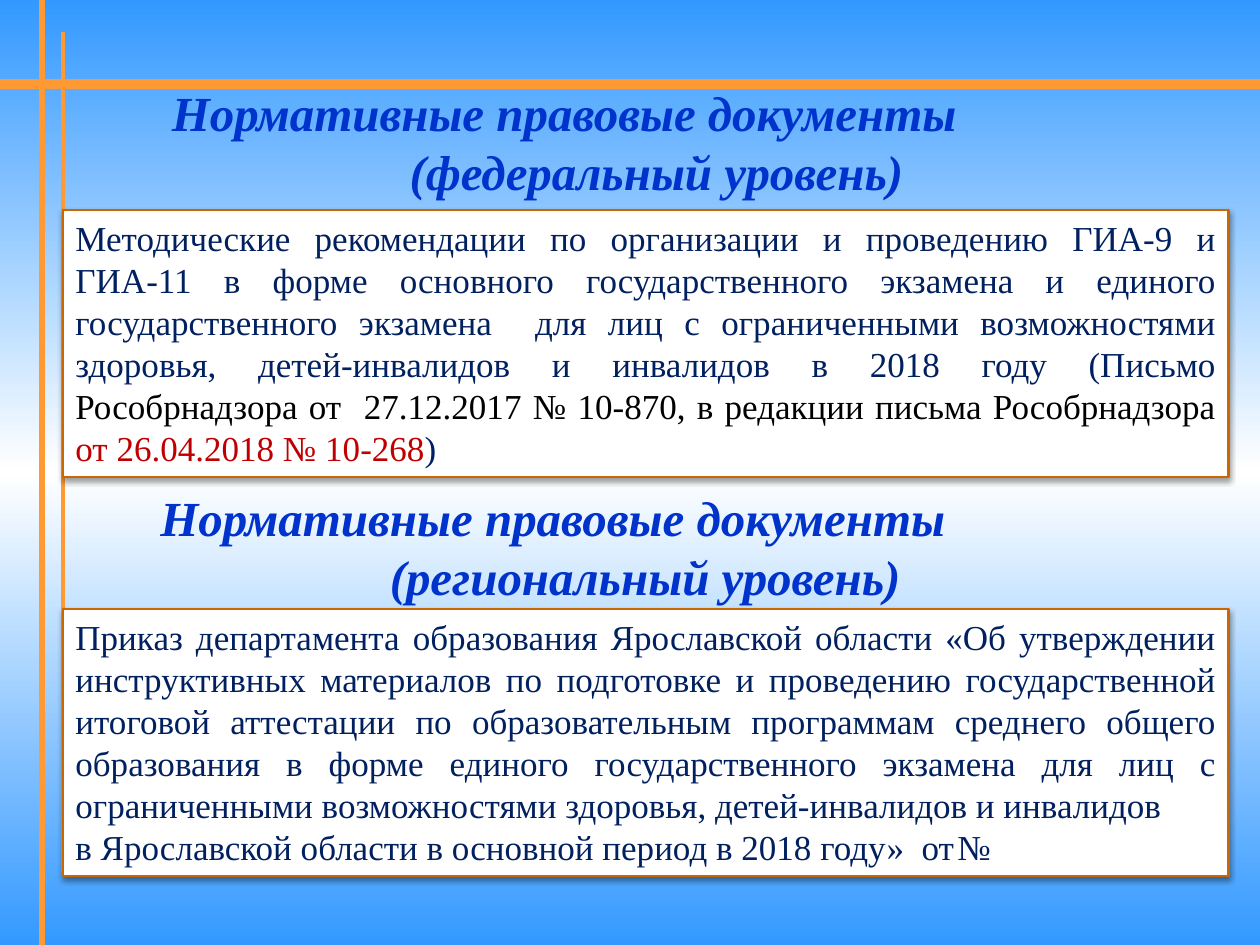
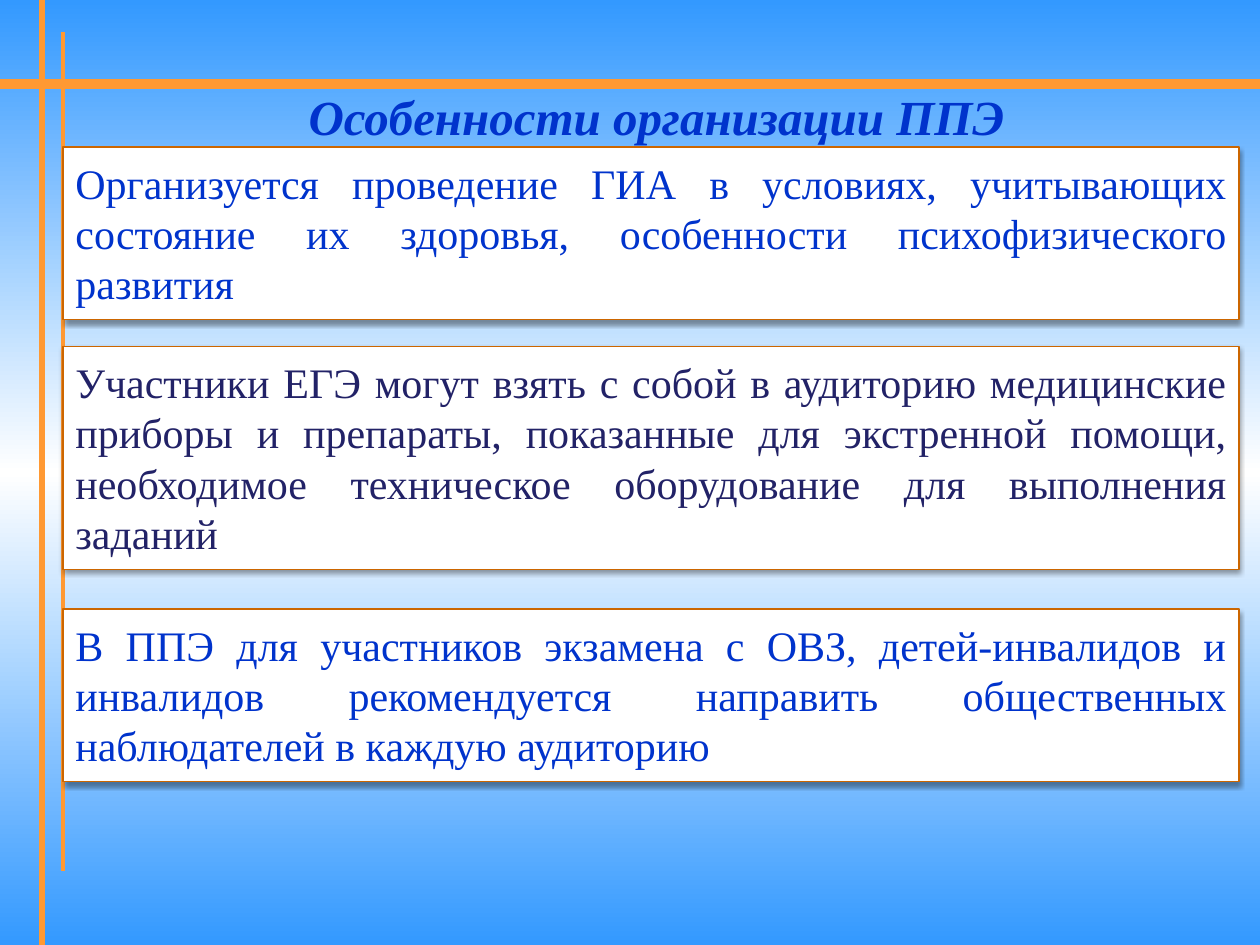
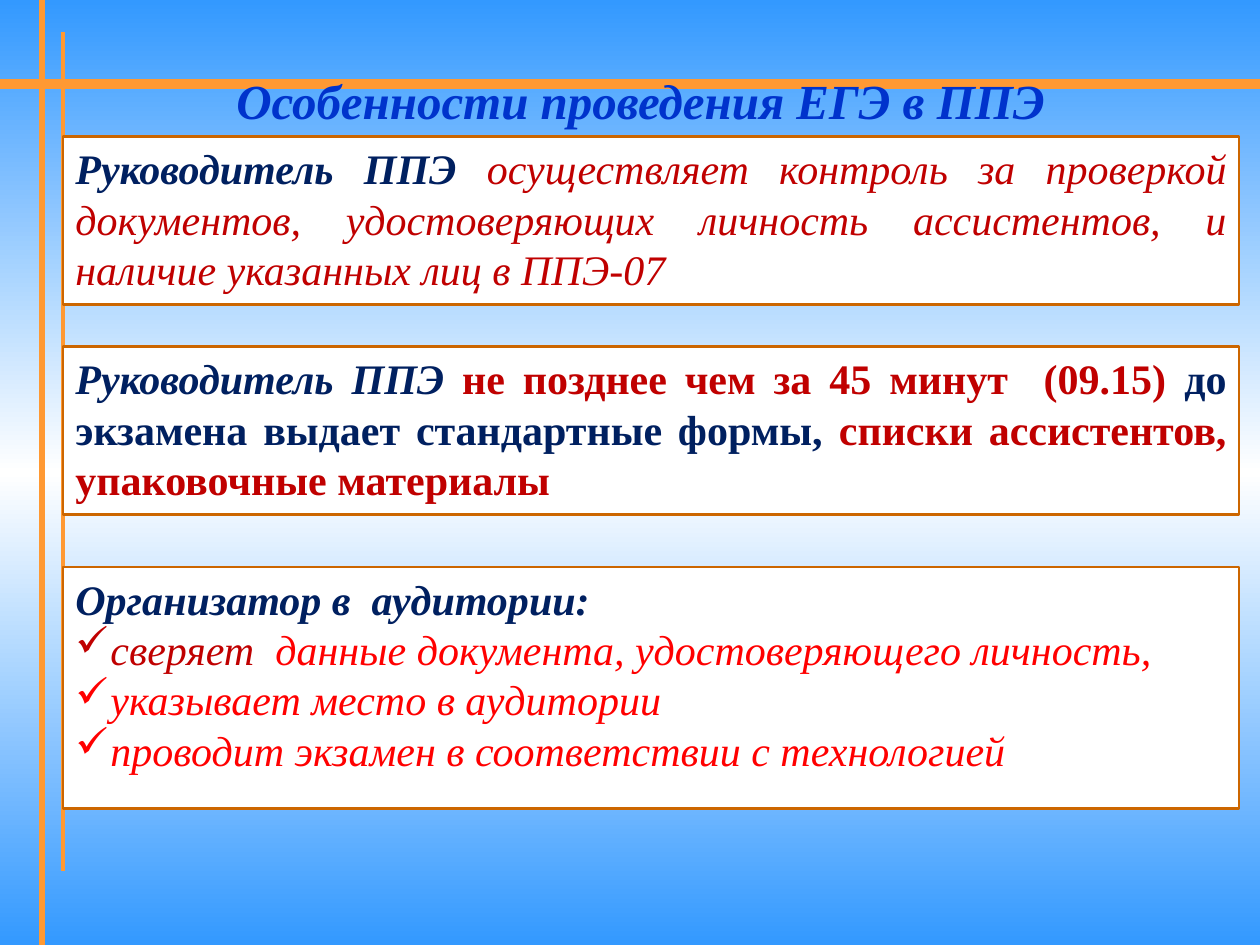
from dataclasses import dataclass

from pptx import Presentation
from pptx.dml.color import RGBColor
from pptx.enum.shapes import MSO_CONNECTOR as Connector, MSO_SHAPE as Preset
from pptx.enum.text import MSO_ANCHOR as Anchor, PP_ALIGN as Align
from pptx.oxml.ns import qn
from pptx.oxml.xmlchemy import OxmlElement
from pptx.util import Pt

FONT = "Times New Roman"
WIDTH, HEIGHT = 720, 540
SKY, WHITE, ORANGE, BROWN = "3399FF", "FFFFFF", "FF9933", "CC6600"
BLUE, NAVY, INDIGO = "0033CC", "002060", "222267"
BLACK, CRIMSON, RED = "000000", "C00000", "FF0000"
TITLE_SIZE = 28
SHADOW_OPACITY = 38


@dataclass(frozen=True)
class Span:
    text: str
    color: str = NAVY
    bold: bool = False
    italic: bool = False


@dataclass(frozen=True)
class Para:
    spans: list[Span]
    align: Align = Align.JUSTIFY
    margin: float = 0
    indent: float = 0
    bullet: str = ""
    tab: float = 0


@dataclass(frozen=True)
class Title:
    left: float
    top: float
    width: float
    height: float
    paras: list[Para]


@dataclass(frozen=True)
class Panel:
    top: float
    height: float
    paras: list[Para]


@dataclass(frozen=True)
class PanelStyle:
    size: float
    width: float = 672
    border: float = 1.5
    padding: float = 3.6
    shadow: bool = False


@dataclass(frozen=True)
class Rule:
    x1: float
    y1: float
    x2: float
    y2: float
    weight: float


@dataclass(frozen=True)
class Page:
    titles: list[Title]
    panels: list[Panel]
    style: PanelStyle


RULES = [
    Rule(0, 48, WIDTH, 48, 6),
    Rule(24, 0, 24, HEIGHT, 3),
    Rule(36, 18, 36, 498, 2.25),
]


def rgb(color: str) -> RGBColor:
    return RGBColor.from_string(color)


def add_child(parent, tag: str, **attributes):
    child = OxmlElement(tag)
    for name, value in attributes.items():
        child.set(name, str(value))
    parent.append(child)
    return child


def set_background(master) -> None:
    fill = master.background.fill
    fill.gradient()
    fill.gradient_angle = 270
    stops = master.element.find(".//" + qn("a:gsLst"))
    for stop in list(stops):
        stops.remove(stop)
    for position, color in ((0, SKY), (50, WHITE), (100, SKY)):
        stop = add_child(stops, "a:gs", pos=position * 1000)
        add_child(stop, "a:srgbClr", val=color)


def draw_rule(slide, rule: Rule) -> None:
    line = slide.shapes.add_connector(
        Connector.STRAIGHT, Pt(rule.x1), Pt(rule.y1), Pt(rule.x2), Pt(rule.y2)
    )
    line.line.color.rgb = rgb(ORANGE)
    line.line.width = Pt(rule.weight)
    add_child(line.element.spPr, "a:effectLst")


def write(frame, paras: list[Para], size: float) -> None:
    frame.word_wrap = True
    for index, item in enumerate(paras):
        para = frame.paragraphs[0] if index == 0 else frame.add_paragraph()
        para.alignment = item.align
        properties = para._p.get_or_add_pPr()
        properties.set("marL", str(Pt(item.margin)))
        properties.set("indent", str(Pt(item.indent)))
        if item.bullet:
            add_child(properties, "a:buChar", char=item.bullet)
        if item.tab:
            tabs = add_child(properties, "a:tabLst")
            add_child(tabs, "a:tab", pos=Pt(item.tab), algn="l")
        for part in item.spans:
            span = para.add_run()
            span.text = part.text
            span.font.name = FONT
            span.font.size = Pt(size)
            span.font.bold = part.bold
            span.font.italic = part.italic
            span.font.color.rgb = rgb(part.color)


def draw_title(slide, title: Title) -> None:
    box = slide.shapes.add_textbox(
        Pt(title.left), Pt(title.top), Pt(title.width), Pt(title.height)
    )
    box.text_frame.vertical_anchor = Anchor.MIDDLE
    write(box.text_frame, title.paras, TITLE_SIZE)


def draw_panel(slide, panel: Panel, style: PanelStyle) -> None:
    box = slide.shapes.add_shape(
        Preset.RECTANGLE, Pt(36), Pt(panel.top), Pt(style.width), Pt(panel.height)
    )
    box.shadow.inherit = False
    box.fill.solid()
    box.fill.fore_color.rgb = rgb(WHITE)
    box.line.color.rgb = rgb(BROWN)
    box.line.width = Pt(style.border)
    if style.shadow:
        effects = box.element.spPr.find(qn("a:effectLst"))
        shadow = add_child(
            effects, "a:outerShdw", blurRad=Pt(3), dist=Pt(1.6),
            dir=90 * 60000, rotWithShape=0,
        )
        color = add_child(shadow, "a:srgbClr", val=BLACK)
        add_child(color, "a:alpha", val=SHADOW_OPACITY * 1000)
    frame = box.text_frame
    frame.vertical_anchor = Anchor.TOP
    frame.margin_top = frame.margin_bottom = Pt(style.padding)
    write(frame, panel.paras, style.size)


def heading(text: str, align: Align = Align.CENTER, margin: float = 0) -> Para:
    return Para([Span(text, BLUE, True, True)], align, margin)


def level_heading(level: str) -> list[Para]:
    return [
        heading("Нормативные правовые документы", Align.LEFT, 48.6),
        heading(level),
    ]


def plain(text: str, color: str = NAVY) -> Para:
    return Para([Span(text, color)])


def check_item(*spans: Span) -> Para:
    return Para(list(spans), margin=20, indent=-20, bullet="✓")


MANAGER = Span("Руководитель ППЭ ", NAVY, True, True)

PAGES = [
    Page(
        [
            Title(42.5, 54, 665.3, 54, level_heading("(федеральный уровень)")),
            Title(36, 288, 665.3, 48, level_heading("(региональный уровень)")),
        ],
        [
            Panel(120, 152.6, [Para([
                Span("Методические рекомендации по организации и проведению ГИА-9 и "
                     "ГИА-11 в форме основного государственного экзамена и единого "
                     "государственного экзамена  для лиц с ограниченными возможностями "
                     "здоровья, детей-инвалидов и инвалидов в 2018 году (Письмо "),
                Span("Рособрнадзора от  27.12.2017 № 10-870, в редакции письма "
                     "Рособрнадзора ", BLACK),
                Span("от 26.04.2018 № 10-268", CRIMSON),
                Span(")"),
            ])]),
            Panel(348, 152.6, [
                plain("Приказ департамента образования Ярославской области "
                      "«Об утверждении инструктивных материалов по подготовке и "
                      "проведению государственной итоговой аттестации по "
                      "образовательным программам среднего общего образования в форме "
                      "единого государственного экзамена для лиц с ограниченными "
                      "возможностями здоровья, детей-инвалидов и инвалидов"),
                Para([Span("в Ярославской области в основной период в 2018 году»  "
                           "от\t№")], tab=517.4),
            ]),
        ],
        PanelStyle(20, width=666, shadow=True),
    ),
    Page(
        [Title(42.5, 54, 665.3, 24, [heading("Особенности организации ППЭ")])],
        [
            Panel(84, 98.6, [plain(
                "Организуется проведение ГИА в условиях, учитывающих состояние их "
                "здоровья, особенности психофизического развития", BLUE)]),
            Panel(198, 127.4, [plain(
                "Участники ЕГЭ могут взять с собой в аудиторию медицинские приборы и "
                "препараты, показанные для экстренной помощи, необходимое техническое "
                "оборудование для выполнения заданий", INDIGO)]),
            Panel(348, 98.6, [plain(
                "В ППЭ для участников экзамена с ОВЗ, детей-инвалидов и инвалидов "
                "рекомендуется направить общественных наблюдателей в каждую "
                "аудиторию", BLUE)]),
        ],
        PanelStyle(24, border=0.75, padding=5.76, shadow=True),
    ),
    Page(
        [Title(30, 36, 672, 42, [heading("Особенности проведения ЕГЭ в ППЭ")])],
        [
            Panel(78, 96, [Para([
                MANAGER,
                Span("осуществляет контроль за проверкой документов, удостоверяющих "
                     "личность ассистентов, и наличие указанных лиц в ППЭ-07",
                     CRIMSON, italic=True),
            ])]),
            Panel(198, 96, [Para([
                MANAGER,
                Span("не позднее чем за 45 минут  (09.15) ", CRIMSON, True),
                Span("до экзамена выдает стандартные формы, ", NAVY, True),
                Span("списки ассистентов, упаковочные материалы", CRIMSON, True),
            ])]),
            Panel(324, 138, [
                Para([Span("Организатор в  аудитории:", NAVY, True, True)]),
                check_item(
                    Span("сверяет  ", CRIMSON, italic=True),
                    Span("данные документа, удостоверяющего личность,", RED,
                         italic=True),
                ),
                check_item(Span("указывает место в аудитории", RED, italic=True)),
                check_item(Span("проводит экзамен в соответствии с технологией", RED,
                                italic=True)),
            ]),
        ],
        PanelStyle(24),
    ),
]


def main() -> None:
    deck = Presentation()
    deck.slide_width, deck.slide_height = Pt(WIDTH), Pt(HEIGHT)
    set_background(deck.slide_master)
    for page in PAGES:
        slide = deck.slides.add_slide(deck.slide_layouts[6])
        for rule in RULES:
            draw_rule(slide, rule)
        for panel in page.panels:
            draw_panel(slide, panel, page.style)
        for title in page.titles:
            draw_title(slide, title)
    deck.save("out.pptx")


if __name__ == "__main__":
    main()
